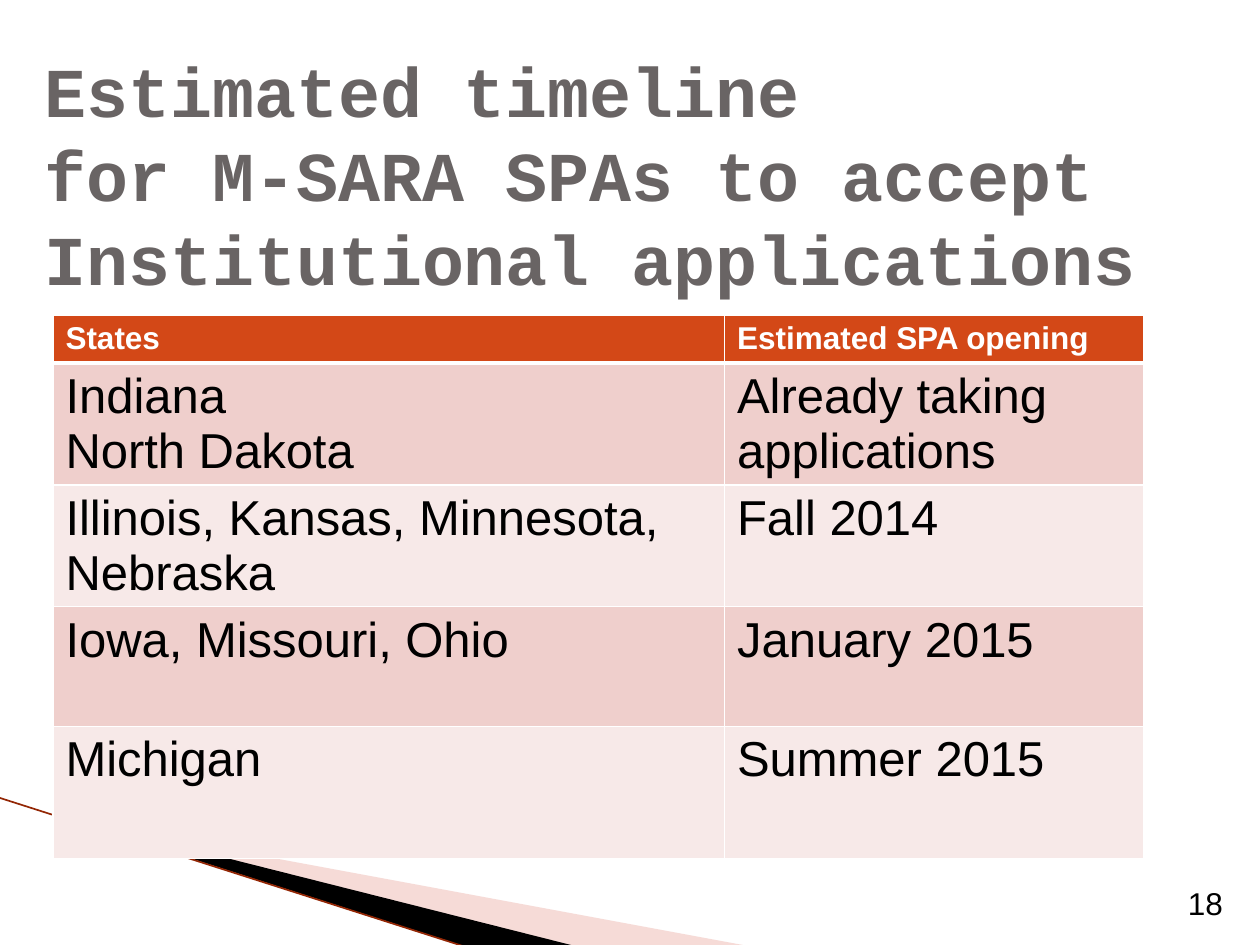
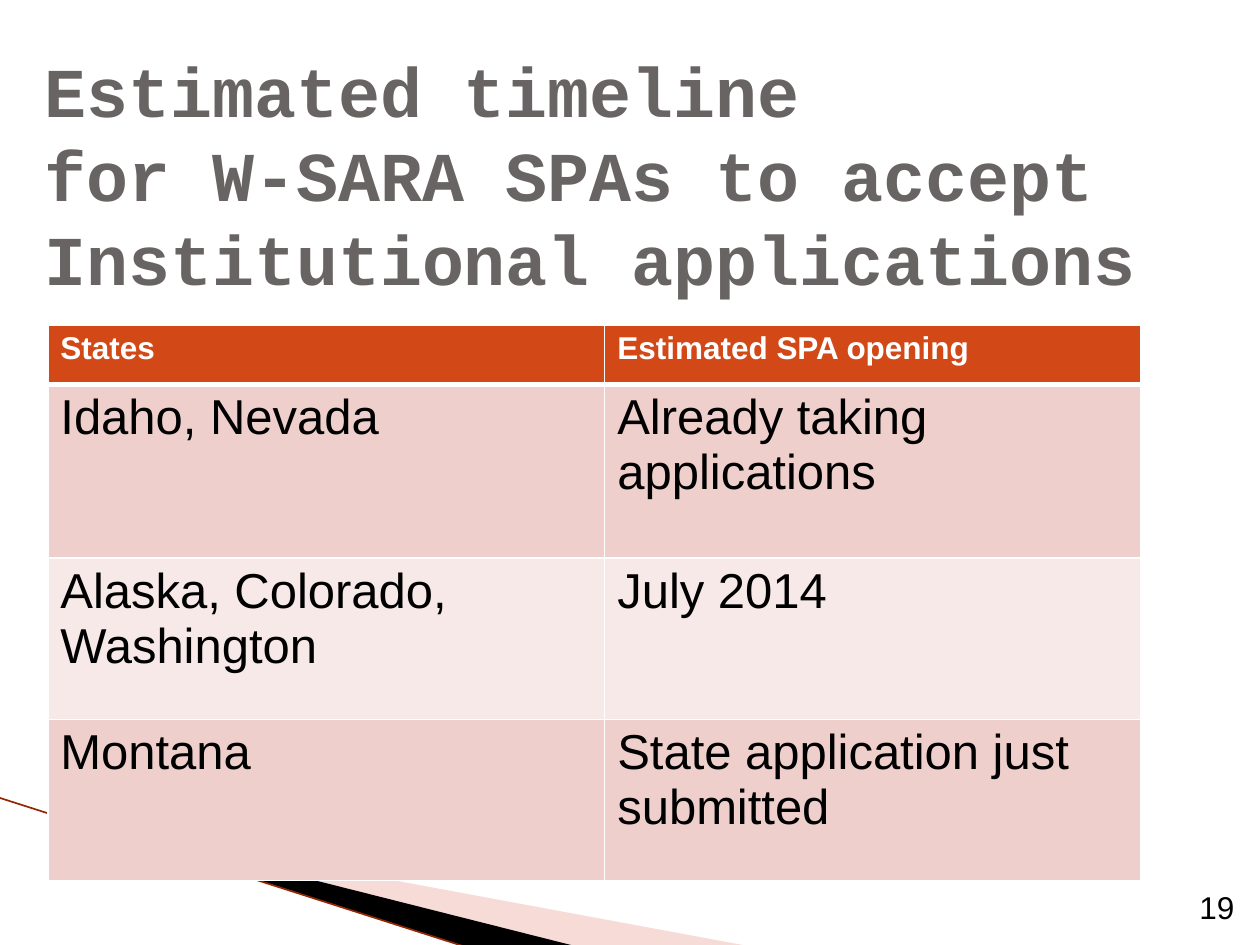
from dataclasses import dataclass

from lxml.etree import SubElement
from pptx import Presentation
from pptx.dml.color import RGBColor
from pptx.enum.shapes import MSO_CONNECTOR
from pptx.enum.text import MSO_ANCHOR, MSO_AUTO_SIZE, PP_ALIGN
from pptx.oxml.ns import qn
from pptx.util import Inches, Pt

COLORS = {
    "title": "696464",
    "header": "D34817",
    "odd_row": "EFCFCC",
    "even_row": "F7E9E8",
    "white": "FFFFFF",
    "black": "000000",
    "pale_band": "E9A59D",
    "band_edge": "932604",
}
TITLE_FONT = {"name": "Courier New", "size": Pt(40), "bold": True}
HEADER_FONT = {"name": "Arial", "size": Pt(18), "bold": True}
BODY_FONT = {"name": "Arial", "size": Pt(28), "bold": False}
NUMBER_FONT = {"name": "Arial", "size": Pt(18)}
TITLE_FRAME = {
    "word_wrap": True,
    "auto_size": MSO_AUTO_SIZE.NONE,
    "vertical_anchor": MSO_ANCHOR.TOP,
    "margin_left": Inches(0.1),
    "margin_right": Inches(0.1),
    "margin_top": Inches(0.13),
    "margin_bottom": Inches(0),
}
TITLE_PARAGRAPH = {"alignment": PP_ALIGN.LEFT, "line_spacing": Pt(48)}
HEADINGS = ("States", "Estimated SPA opening")


@dataclass(frozen=True)
class Band:
    """A wedge along the bottom edge, its corners in inches."""
    color: str
    corners: tuple[tuple[float, float], ...]
    opacity: int = 100


@dataclass(frozen=True)
class Timeline:
    """One region's slide, lengths in inches."""
    region: str
    number: int
    number_at: tuple[float, float]
    table_at: tuple[float, float]
    columns: tuple[float, ...]
    heights: tuple[float, ...]
    openings: tuple[tuple[str, str], ...]


BANDS = (
    Band("pale_band", ((0.55, 6.51), (5.95, 7.51), (4.56, 7.51), (0.55, 6.5)), 40),
    Band("black", ((0.53, 6.49), (4.57, 7.51), (3.72, 7.52), (0.54, 6.5))),
)
TIMELINES = (
    Timeline(
        "M-SARA", 18, (9.33, 6.97), (0.42, 2.5),
        (5.33, 3.33), (0.36, 0.92, 0.92, 0.95, 1.05),
        (
            ("Indiana\nNorth Dakota", "Already taking applications"),
            ("Illinois, Kansas, Minnesota, Nebraska", "Fall 2014"),
            ("Iowa, Missouri, Ohio", "January 2015"),
            ("Michigan", "Summer 2015"),
        ),
    ),
    Timeline(
        "W-SARA", 19, (9.42, 7), (0.38, 2.58),
        (4.42, 4.25), (0.47, 1.38, 1.28, 1.28),
        (
            ("Idaho, Nevada", "Already taking applications"),
            ("Alaska, Colorado, Washington", "July 2014"),
            ("Montana", "State application just submitted"),
        ),
    ),
)


def rgb(color: str) -> RGBColor:
    return RGBColor.from_string(COLORS[color])


def apply_format(target, values: dict) -> None:
    for attribute, value in values.items():
        setattr(target, attribute, value)


def format_text(frame, font: dict, color: str) -> None:
    for paragraph in frame.paragraphs:
        for run in paragraph.runs:
            apply_format(run.font, font)
            run.font.color.rgb = rgb(color)


def draw_band(slide, band: Band) -> None:
    start, *others = [(Inches(x), Inches(y)) for x, y in band.corners]
    builder = slide.shapes.build_freeform(*start)
    builder.add_line_segments(others, close=True)
    wedge = builder.convert_to_shape()
    wedge.shadow.inherit = False
    wedge.line.fill.background()
    wedge.fill.solid()
    wedge.fill.fore_color.rgb = rgb(band.color)
    if band.opacity < 100:
        tint = wedge.fill._xPr.find(".//" + qn("a:srgbClr"))
        SubElement(tint, qn("a:alpha"), val=str(band.opacity * 1000))


def draw_backdrop(slide) -> None:
    for band in BANDS:
        draw_band(slide, band)
    edge = slide.shapes.add_connector(
        MSO_CONNECTOR.STRAIGHT, Inches(-0.01), Inches(6.33), Inches(3.71), Inches(7.52))
    edge.line.color.rgb = rgb("band_edge")
    edge.line.width = Pt(0.95)
    SubElement(edge._element.spPr, qn("a:effectLst"))


def write_title(slide, region: str) -> None:
    title = slide.shapes.title
    apply_format(title, {"left": Inches(0.25), "top": Inches(0.25),
                         "width": Inches(9), "height": Inches(2)})
    frame = title.text_frame
    frame.text = f"Estimated timeline \vfor {region} SPAs to accept Institutional applications"
    apply_format(frame, TITLE_FRAME)
    apply_format(frame.paragraphs[0], TITLE_PARAGRAPH)
    format_text(frame, TITLE_FONT, "title")


def add_borders(cell, is_header: bool) -> None:
    properties = cell._tc.get_or_add_tcPr()
    for side in "LRTB":
        points = 3 if is_header and side == "B" else 1
        border = SubElement(properties, qn(f"a:ln{side}"), w=str(Pt(points)))
        fill = SubElement(border, qn("a:solidFill"))
        SubElement(fill, qn("a:srgbClr"), val=COLORS["white"])


def fill_cell(cell, text: str, row: int) -> None:
    is_header = row == 0
    cell.text = text
    add_borders(cell, is_header)
    cell.fill.solid()
    if is_header:
        cell.fill.fore_color.rgb = rgb("header")
        format_text(cell.text_frame, HEADER_FONT, "white")
    else:
        cell.fill.fore_color.rgb = rgb("odd_row" if row % 2 else "even_row")
        format_text(cell.text_frame, BODY_FONT, "black")


def draw_openings(slide, timeline: Timeline) -> None:
    rows = (HEADINGS, *timeline.openings)
    left, top = timeline.table_at
    openings = slide.shapes.add_table(
        len(rows), len(HEADINGS), Inches(left), Inches(top),
        Inches(sum(timeline.columns)), Inches(sum(timeline.heights))).table
    for column, width in zip(openings.columns, timeline.columns):
        column.width = Inches(width)
    for row, height in zip(openings.rows, timeline.heights):
        row.height = Inches(height)
    for row_index, texts in enumerate(rows):
        for column_index, text in enumerate(texts):
            fill_cell(openings.cell(row_index, column_index), text, row_index)


def write_number(slide, timeline: Timeline) -> None:
    left, top = timeline.number_at
    frame = slide.shapes.add_textbox(
        Inches(left), Inches(top), Inches(0.48), Inches(0.4)).text_frame
    frame.text = str(timeline.number)
    apply_format(frame, {"word_wrap": False, "auto_size": MSO_AUTO_SIZE.SHAPE_TO_FIT_TEXT})
    format_text(frame, NUMBER_FONT, "black")


def main() -> None:
    deck = Presentation()
    deck.slide_width, deck.slide_height = Inches(10), Inches(7.5)
    title_only = deck.slide_layouts.get_by_name("Title Only")
    for timeline in TIMELINES:
        slide = deck.slides.add_slide(title_only)
        draw_backdrop(slide)
        write_title(slide, timeline.region)
        draw_openings(slide, timeline)
        write_number(slide, timeline)
    deck.save("out.pptx")


if __name__ == "__main__":
    main()
